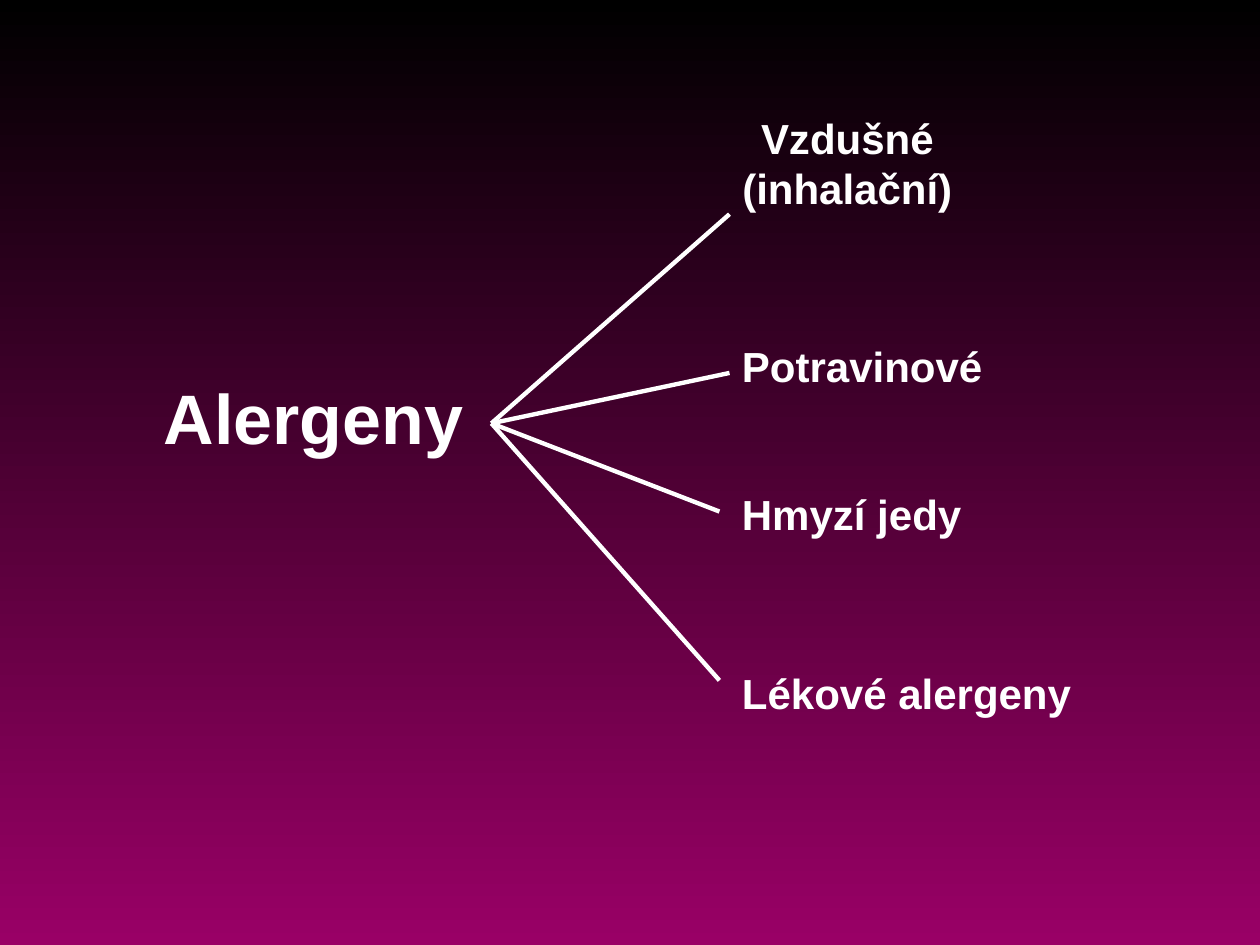
from pptx import Presentation
from pptx.dml.color import RGBColor
from pptx.enum.shapes import MSO_CONNECTOR
from pptx.enum.text import MSO_ANCHOR, MSO_AUTO_SIZE, PP_ALIGN
from pptx.oxml.ns import qn
from pptx.util import Inches, Pt
from lxml.etree import SubElement

WHITE = RGBColor(0xFF, 0xFF, 0xFF)
BLACK = RGBColor(0x00, 0x00, 0x00)
MAGENTA = RGBColor(0x99, 0x00, 0x66)

TITLE = "Alergeny"
LABEL_LEFT = 5.79
HUB = (3.9, 3.36)
BRANCHES = [
    (["Vzdušné", "(inhalační)"], 0.84, 1.87, 0.9, PP_ALIGN.CENTER, (5.79, 1.7)),
    (["Potravinové"], 2.65, 2.11, 0.5, PP_ALIGN.LEFT, (5.79, 2.96)),
    (["Hmyzí jedy"], 3.83, 1.94, 0.5, PP_ALIGN.LEFT, (5.71, 4.06)),
    (["Lékové alergeny"], 5.25, 2.81, 0.5, PP_ALIGN.LEFT, (5.71, 5.4)),
]


def write(sp, lines, size=24, align=PP_ALIGN.LEFT):
    tf = sp.text_frame
    tf.word_wrap = False
    tf.auto_size = MSO_AUTO_SIZE.SHAPE_TO_FIT_TEXT
    tf.vertical_anchor = MSO_ANCHOR.TOP
    for i, line in enumerate(lines):
        p = tf.add_paragraph() if i else tf.paragraphs[0]
        p.alignment = align
        r = p.add_run()
        r.text = line
        r.font.name = "Arial"
        r.font.size = Pt(size)
        r.font.bold = True
        r.font.color.rgb = WHITE


def add_branch_line(slide, start, end):
    line = slide.shapes.add_connector(
        MSO_CONNECTOR.STRAIGHT, *(Inches(v) for v in start + end))
    line.line.color.rgb = WHITE
    line.line.width = Pt(2.5)
    SubElement(line._element.spPr, qn("a:effectLst"))


prs = Presentation()
prs.slide_width, prs.slide_height = Inches(10), Inches(7.5)
slide = prs.slides.add_slide(prs.slide_layouts[5])

fill = slide.background.fill
fill.gradient()
fill.gradient_angle = 270
for stop, color, position in zip(fill.gradient_stops, (BLACK, MAGENTA), (0, 1)):
    stop.color.rgb = color
    stop.position = position

title = slide.shapes.title
title.left, title.top = Inches(1.2), Inches(2.92)
title.width, title.height = Inches(2.58), Inches(0.77)
write(title, [TITLE], size=40)

for lines, top, width, height, align, end in BRANCHES:
    sp = slide.shapes.add_textbox(
        Inches(LABEL_LEFT), Inches(top), Inches(width), Inches(height))
    write(sp, lines, align=align)
    add_branch_line(slide, HUB, end)

prs.save("out.pptx")
